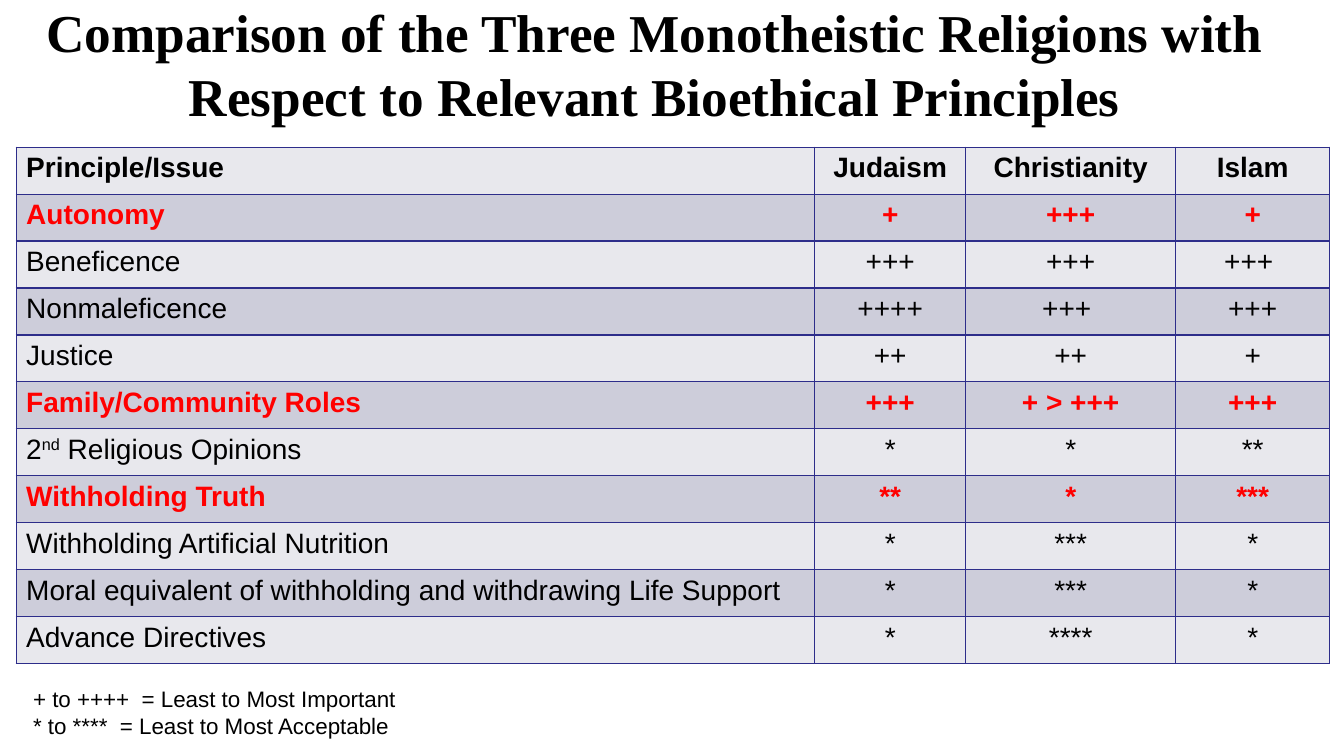
from dataclasses import dataclass

from lxml import etree
from pptx import Presentation
from pptx.dml.color import RGBColor
from pptx.enum.text import MSO_ANCHOR, MSO_AUTO_SIZE, PP_ALIGN
from pptx.oxml.ns import qn
from pptx.util import Inches, Pt

CENTER = PP_ALIGN.CENTER
LEFT = PP_ALIGN.LEFT
MIDDLE = MSO_ANCHOR.MIDDLE
NO_AUTOFIT = MSO_AUTO_SIZE.NONE
TITLE_ONLY = 5


@dataclass(frozen=True)
class Theme:
    title_font: str = "Times New Roman"
    body_font: str = "Arial"
    title_size: int = 38
    table_size: int = 20
    legend_size: int = 16
    ink: str = "000000"
    accent: str = "FF0000"
    paper: str = "FFFFFF"
    border: str = "2D2D8A"
    border_width: int = 1
    bands: tuple[str, str] = ("E8E8ED", "CDCDDA")


@dataclass(frozen=True)
class Principle:
    name: str
    ratings: tuple[str, str, str]
    bold: bool = False
    accented: bool = False
    ordinal: str = ""
    rest: str = ""


THEME = Theme()
TITLE = ("Comparison of the Three Monotheistic Religions with "
         "Respect to Relevant Bioethical Principles")
LEGEND = ("+ to ++++  = Least to Most Important",
          "* to ****  = Least to Most Acceptable")
COLUMN_WIDTHS = (7.92, 1.5, 2.08, 1.53)
ROW_HEIGHT = 0.466
PRINCIPLES = (
    Principle("Principle/Issue", ("Judaism", "Christianity", "Islam"), bold=True),
    Principle("Autonomy", ("+", "+++", "+"), bold=True, accented=True),
    Principle("Beneficence", ("+++", "+++", "+++ ")),
    Principle("Nonmaleficence", ("++++", "+++ ", "+++")),
    Principle("Justice", ("++", "++", "+")),
    Principle("Family/Community Roles", ("+++", "+ > +++", "+++"), bold=True, accented=True),
    Principle("2", ("*", "*", "**"), ordinal="nd", rest=" Religious Opinions"),
    Principle("Withholding Truth", ("**", "*", "***"), bold=True, accented=True),
    Principle("Withholding Artificial Nutrition", ("*", "***", "*")),
    Principle("Moral equivalent of withholding and withdrawing Life Support",
              ("*", "***", "*")),
    Principle("Advance Directives", ("*", "****", "*")),
)


def add_span(para, text: str, font: str, size: int, color: str,
             bold: bool = False, raised: bool = False) -> None:
    span = para.add_run()
    span.text = text
    span.font.name = font
    span.font.size = Pt(size)
    span.font.bold = bold
    span.font.color.rgb = RGBColor.from_string(color)
    if raised:
        span.font._element.set("baseline", "30000")


def set_borders(cell, theme: Theme) -> None:
    properties = cell._tc.get_or_add_tcPr()
    for position, side in enumerate(("a:lnL", "a:lnR", "a:lnT", "a:lnB")):
        line = etree.Element(qn(side), w=str(Pt(theme.border_width)))
        fill = etree.SubElement(line, qn("a:solidFill"))
        etree.SubElement(fill, qn("a:srgbClr"), val=theme.border)
        properties.insert(position, line)


def add_title(page, theme: Theme) -> None:
    box = page.shapes.title
    box.left, box.top = Inches(0.33), Inches(0)
    box.width, box.height = Inches(12.33), Inches(1.25)
    frame = box.text_frame
    frame.auto_size = NO_AUTOFIT
    frame.vertical_anchor = MIDDLE
    para = frame.paragraphs[0]
    para.alignment = CENTER
    add_span(para, TITLE, theme.title_font, theme.title_size, theme.ink, bold=True)


def fill_row(table, row: int, principle: Principle, theme: Theme) -> None:
    color = theme.accent if principle.accented else theme.ink
    for column, text in enumerate((principle.name, *principle.ratings)):
        cell = table.cell(row, column)
        cell.fill.solid()
        cell.fill.fore_color.rgb = RGBColor.from_string(theme.bands[row % 2])
        set_borders(cell, theme)
        para = cell.text_frame.paragraphs[0]
        para.alignment = CENTER if column else LEFT
        pieces = [(text, False)]
        if column == 0 and principle.ordinal:
            pieces += [(principle.ordinal, True), (principle.rest, False)]
        for piece, raised in pieces:
            add_span(para, piece, theme.body_font, theme.table_size, color,
                     principle.bold, raised)


def add_comparison(page, theme: Theme) -> None:
    table = page.shapes.add_table(
        len(PRINCIPLES), len(COLUMN_WIDTHS), Inches(0.16), Inches(1.46),
        Inches(sum(COLUMN_WIDTHS)), Inches(ROW_HEIGHT * len(PRINCIPLES))).table
    for column, width in zip(table.columns, COLUMN_WIDTHS):
        column.width = Inches(width)
    for row, principle in enumerate(PRINCIPLES):
        table.rows[row].height = Inches(ROW_HEIGHT)
        fill_row(table, row, principle, theme)


def add_legend(page, theme: Theme) -> None:
    box = page.shapes.add_textbox(Inches(0.23), Inches(6.75), Inches(3.94), Inches(0.64))
    box.fill.solid()
    box.fill.fore_color.rgb = RGBColor.from_string(theme.paper)
    frame = box.text_frame
    frame.word_wrap = True
    for index, text in enumerate(LEGEND):
        para = frame.add_paragraph() if index else frame.paragraphs[0]
        add_span(para, text, theme.body_font, theme.legend_size, theme.ink)


def main() -> None:
    deck = Presentation()
    deck.slide_width, deck.slide_height = Inches(13.33), Inches(7.5)
    page = deck.slides.add_slide(deck.slide_layouts[TITLE_ONLY])
    add_title(page, THEME)
    add_comparison(page, THEME)
    add_legend(page, THEME)
    deck.save("out.pptx")


if __name__ == "__main__":
    main()
